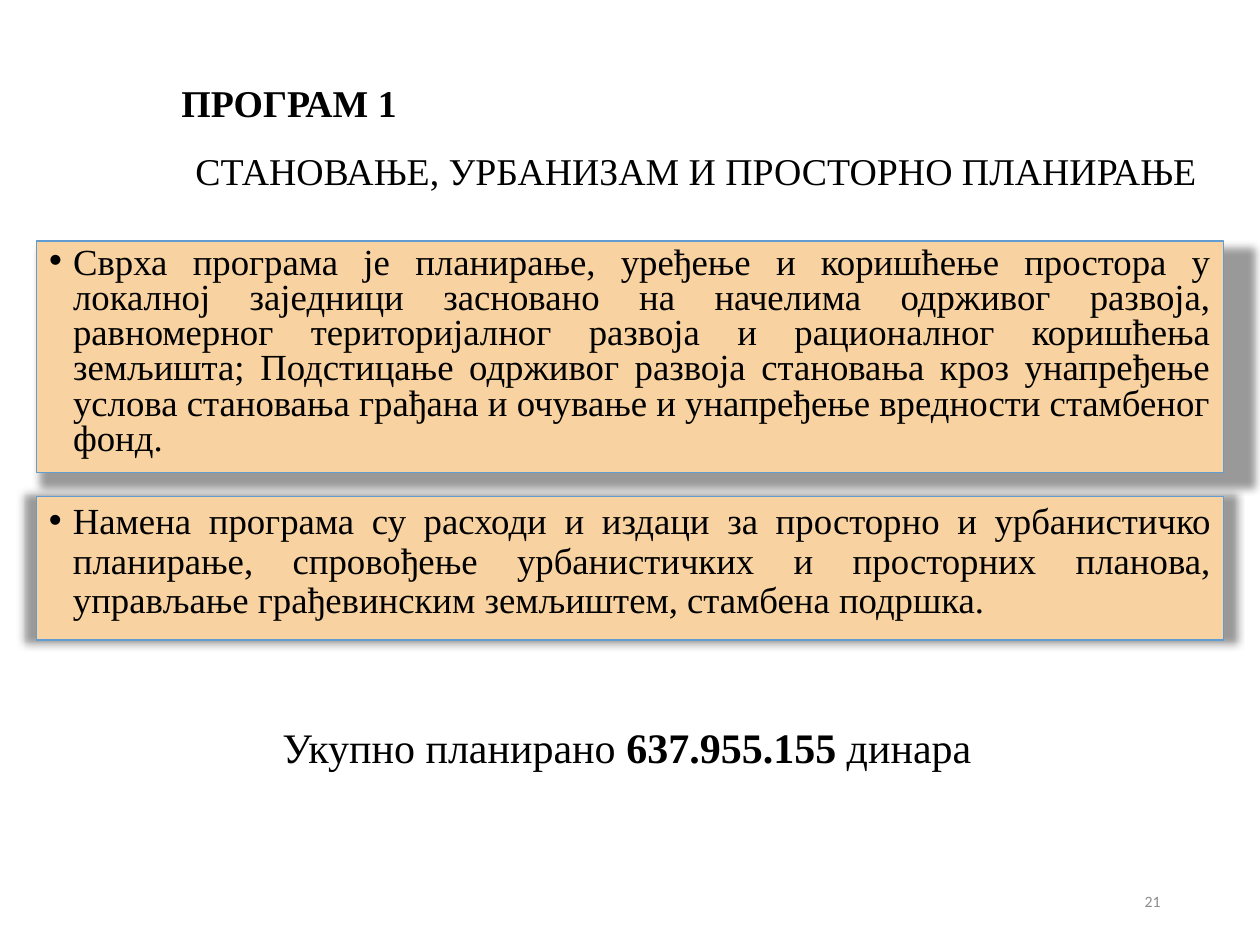
from dataclasses import dataclass

from lxml.etree import SubElement
from pptx import Presentation
from pptx.dml.color import RGBColor
from pptx.enum.shapes import MSO_SHAPE
from pptx.enum.text import MSO_ANCHOR, MSO_AUTO_SIZE, PP_ALIGN as Align
from pptx.oxml.ns import qn
from pptx.util import Inches, Pt

COLORS = {"text": "000000", "panel": "F8D2A0", "border": "629DD1",
          "number": "8C8C8C"}
SERIF = "Times New Roman"


@dataclass
class Panel:
    text: str
    top: float
    height: float
    line_spacing: float
    shadow_align: str
    shadow_distance: float


PURPOSE = Panel(
    "Сврха програма је планирање, уређење и коришћење простора у локалној "
    "заједници засновано на начелима одрживог развоја, равномерног "
    "територијалног развоја и рационалног коришћења земљишта; Подстицање "
    "одрживог развоја становања кроз унапређење услова становања грађана и "
    "очување и унапређење вредности стамбеног фонд.",
    1.91, 1.84, 0.8, "tl", 3)
USE = Panel(
    "Намена програма су расходи и издаци за просторно и урбанистичко "
    "планирање, спровођење урбанистичких и просторних планова, управљање "
    "грађевинским земљиштем, стамбена подршка.",
    3.94, 1.14, 0.9, "ctr", 0)


def color(name: str) -> RGBColor:
    return RGBColor.from_string(COLORS[name])


def place(shape, left: float, top: float, width: float, height: float) -> None:
    shape.left, shape.top = Inches(left), Inches(top)
    shape.width, shape.height = Inches(width), Inches(height)


def style(paragraph, size: float, align: Align, font: str = SERIF,
          ink: str = "text") -> None:
    paragraph.alignment = align
    paragraph.space_before = Pt(0)
    for run in paragraph.runs:
        run.font.size = Pt(size)
        run.font.name = font
        run.font.bold = False
        run.font.color.rgb = color(ink)


def add_shadow(shape, align: str, distance: float) -> None:
    effects = SubElement(shape._element.spPr, qn("a:effectLst"))
    shadow = SubElement(effects, qn("a:outerShdw"), blurRad=str(Pt(5)),
                        dist=str(Pt(distance)), dir="2700000", sx="102000",
                        sy="102000", algn=align, rotWithShape="0")
    black = SubElement(shadow, qn("a:srgbClr"), val=COLORS["text"])
    SubElement(black, qn("a:alpha"), val="40000")


def draw_panel(shape, panel: Panel) -> None:
    place(shape, 0.29, panel.top, 9.42, panel.height)
    shape.fill.solid()
    shape.fill.fore_color.rgb = color("panel")
    shape.line.color.rgb = color("border")
    shape.line.width = Pt(1)
    add_shadow(shape, panel.shadow_align, panel.shadow_distance)

    frame = shape.text_frame
    frame.text = panel.text
    frame.word_wrap = True
    frame.auto_size = MSO_AUTO_SIZE.NONE
    frame.vertical_anchor = MSO_ANCHOR.TOP
    paragraph = frame.paragraphs[0]
    style(paragraph, 21, Align.JUSTIFY)
    paragraph.line_spacing = panel.line_spacing
    properties = paragraph._p.get_or_add_pPr()
    properties.set("marL", str(Inches(0.19)))
    properties.set("indent", str(Inches(-0.19)))
    SubElement(properties, qn("a:buFont"), typeface="Arial")
    SubElement(properties, qn("a:buChar"), char="•")


def main() -> None:
    prs = Presentation()
    prs.slide_width, prs.slide_height = Inches(10), Inches(7.5)
    slide = prs.slides.add_slide(prs.slide_layouts[1])
    shapes = slide.shapes

    # Title: programme number, then programme name
    title = shapes.title
    place(title, 0.34, 0.33, 9.37, 1.05)
    heading = title.text_frame
    heading.text = "ПРОГРАМ 1\nСТАНОВАЊЕ, УРБАНИЗАМ И ПРОСТОРНО ПЛАНИРАЊЕ"
    heading.auto_size = MSO_AUTO_SIZE.NONE
    heading.vertical_anchor = MSO_ANCHOR.TOP
    heading.margin_top = Inches(0.12)
    number, name = heading.paragraphs
    style(number, 21.6, Align.LEFT)
    style(name, 21.6, Align.CENTER)
    number.line_spacing = name.line_spacing = 1.5
    number.runs[0].font.bold = True
    number._p.get_or_add_pPr().set("marL", str(Inches(1)))

    # Panels
    draw_panel(slide.placeholders[1], PURPOSE)
    draw_panel(shapes.add_shape(MSO_SHAPE.RECTANGLE, 0, 0, 0, 0), USE)

    # Planned total
    total = shapes.add_textbox(0, 0, 0, 0)
    place(total, 1.44, 5.68, 7.07, 0.5)
    total.text_frame.word_wrap = True
    sentence = total.text_frame.paragraphs[0]
    for part in ("Укупно планирано ", "637.955.155", " динара"):
        sentence.add_run().text = part
    style(sentence, 24, Align.CENTER)
    sentence.runs[1].font.bold = True

    # Slide number
    page = shapes.add_textbox(0, 0, 0, 0)
    place(page, 7.06, 6.95, 2.25, 0.4)
    page.text_frame.text = "21"
    page.text_frame.word_wrap = True
    page.text_frame.vertical_anchor = MSO_ANCHOR.MIDDLE
    style(page.text_frame.paragraphs[0], 9, Align.RIGHT, "Calibri", "number")

    prs.save("out.pptx")


if __name__ == "__main__":
    main()
